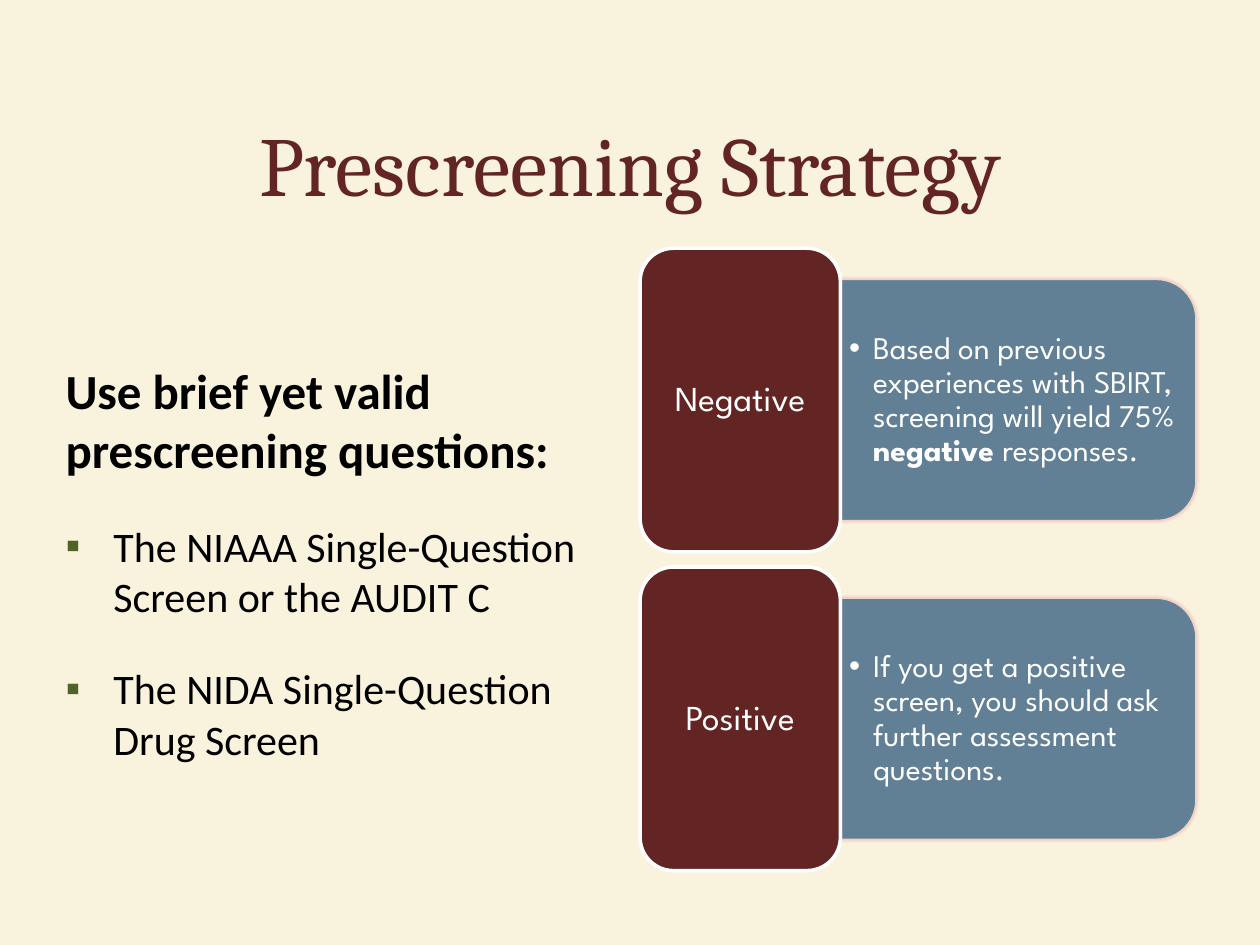
from dataclasses import dataclass

from lxml import etree
from pptx import Presentation
from pptx.dml.color import RGBColor
from pptx.enum.shapes import MSO_SHAPE
from pptx.enum.text import MSO_ANCHOR, MSO_AUTO_SIZE, PP_ALIGN
from pptx.oxml.ns import qn
from pptx.util import Inches, Pt

ROUND = MSO_SHAPE.ROUNDED_RECTANGLE
TAB = MSO_SHAPE.ROUND_2_SAME_RECTANGLE
MIDDLE, TOP = MSO_ANCHOR.MIDDLE, MSO_ANCHOR.TOP
CENTER, LEFT = PP_ALIGN.CENTER, PP_ALIGN.LEFT


@dataclass(frozen=True)
class Theme:
    back: str = "F9F3DD"
    wine: str = "632523"
    blue: str = "51738E"
    blush: str = "FCDDCF"
    green: str = "4F6228"
    black: str = "000000"
    white: str = "FFFFFF"
    serif: str = "Cambria"
    sans: str = "Calibri"
    geo: str = "League Spartan"
    title: int = 48
    lead: int = 28
    item: int = 24
    label: int = 20
    note: int = 18


T = Theme()

# Rows of the diagram, in inches
LEFT_X, TOP_Y, STEP = 5.08, 1.97, 2.53
CARD_W, CARD_H = 1.59, 2.41
PANEL_W, PANEL_H = 2.83, 1.93

ITEMS = [
    "The NIAAA Single-Question Screen or the AUDIT C",
    "The NIDA Single-Question Drug Screen",
]
# Label, then note runs as (text, bold)
ROWS = [
    ("Negative", [
        ("Based on previous experiences with SBIRT, screening will yield 75% ", False),
        ("negative ", True),
        ("responses.", False),
    ]),
    ("Positive", [
        ("If you get a positive screen, you should ask further assessment questions.", False),
    ]),
]


def rgb(code):
    return RGBColor.from_string(code)


def place(shape, x, y, w, h):
    shape.left, shape.top = Inches(x), Inches(y)
    shape.width, shape.height = Inches(w), Inches(h)


def style(para, face, size, color, bold=None):
    font = para.font
    font.name, font.size, font.bold = face, Pt(size), bold
    font.color.rgb = rgb(color)


def bullet(para, mark, indent, color):
    props = para._p.get_or_add_pPr()
    props.set("marL", str(Inches(indent)))
    props.set("indent", str(-Inches(indent)))
    if not mark:
        etree.SubElement(props, qn("a:buNone"))
        return
    tint = etree.SubElement(props, qn("a:buClr"))
    etree.SubElement(tint, qn("a:srgbClr"), val=color)
    etree.SubElement(props, qn("a:buFont"), typeface="Arial")
    etree.SubElement(props, qn("a:buChar"), char=mark)


def fade(fill, share):
    # Transparency of a solid fill
    for color in fill.iter(qn("a:srgbClr")):
        etree.SubElement(color, qn("a:alpha"), val=str(share * 1000))


def frame(shape, anchor, side, edge):
    text = shape.text_frame
    text.word_wrap = True
    text.auto_size = MSO_AUTO_SIZE.NONE
    text.vertical_anchor = anchor
    text.margin_left = text.margin_right = Inches(side)
    text.margin_top = text.margin_bottom = Inches(edge)
    return text


def block(group, kind, box, fill, line):
    shape = group.shapes.add_shape(kind, *map(Inches, box))
    shape.shadow.inherit = False
    shape.fill.solid()
    shape.fill.fore_color.rgb = rgb(fill)
    shape.line.color.rgb = rgb(line)
    shape.line.width = Pt(2)
    return shape


def heading(slide):
    shape = slide.shapes.title
    place(shape, 0, 0.67, 10, 1.25)
    text = frame(shape, MIDDLE, 0.1, 0.05)
    text.text = "Prescreening Strategy"
    para = text.paragraphs[0]
    para.alignment = CENTER
    style(para, T.serif, T.title, T.wine)


def listing(slide):
    shape = slide.placeholders[1]
    place(shape, 0.42, 2.81, 4.83, 3.27)
    text = frame(shape, TOP, 0.1, 0.05)
    text.margin_right = Inches(0.25)
    text.text = "\n".join(["Use brief yet valid prescreening questions:", *ITEMS])
    for i, para in enumerate(text.paragraphs):
        lead = i == 0
        bullet(para, "" if lead else "▪", 0 if lead else 0.38, T.green)
        para.space_before, para.space_after = Pt(0), Pt(24)
        style(para, T.sans, T.lead if lead else T.item, T.black, lead)


def panel(group, x, mid, runs):
    # The tab is turned a quarter, so its frame swaps width and height
    box = (x + (PANEL_W - PANEL_H) / 2, mid - PANEL_W / 2, PANEL_H, PANEL_W)
    shape = block(group, TAB, box, T.blue, T.blush)
    shape.rotation = 90
    fade(shape._element.spPr, 90)

    high = 1.74
    note = group.shapes.add_textbox(
        *map(Inches, (x, mid - high / 2, PANEL_W - 0.1, high)))
    para = frame(note, MIDDLE, 0.07, 0.04).paragraphs[0]
    bullet(para, "•", 0.19, T.white)
    para.alignment, para.line_spacing = LEFT, 0.9
    style(para, T.geo, T.note, T.white)
    for words, bold in runs:
        run = para.add_run()
        run.text = words
        run.font.bold = bold


def card(group, x, y, words):
    shape = block(group, ROUND, (x, y, CARD_W, CARD_H), T.wine, T.white)
    text = frame(shape, MIDDLE, 0.08, 0.04)
    text.text = words
    para = text.paragraphs[0]
    para.alignment, para.line_spacing = CENTER, 0.9
    style(para, T.geo, T.label, T.white)


def main():
    deck = Presentation()
    deck.slide_width, deck.slide_height = Inches(10), Inches(7.5)
    slide = deck.slides.add_slide(deck.slide_layouts[1])
    slide.background.fill.solid()
    slide.background.fill.fore_color.rgb = rgb(T.back)

    heading(slide)
    listing(slide)

    # Diagram: one card and panel per row
    group = slide.shapes.add_group_shape()
    for i, (words, runs) in enumerate(ROWS):
        y = TOP_Y + i * STEP
        panel(group, LEFT_X + CARD_W, y + CARD_H / 2, runs)
        card(group, LEFT_X, y, words)

    deck.save("out.pptx")


if __name__ == "__main__":
    main()
